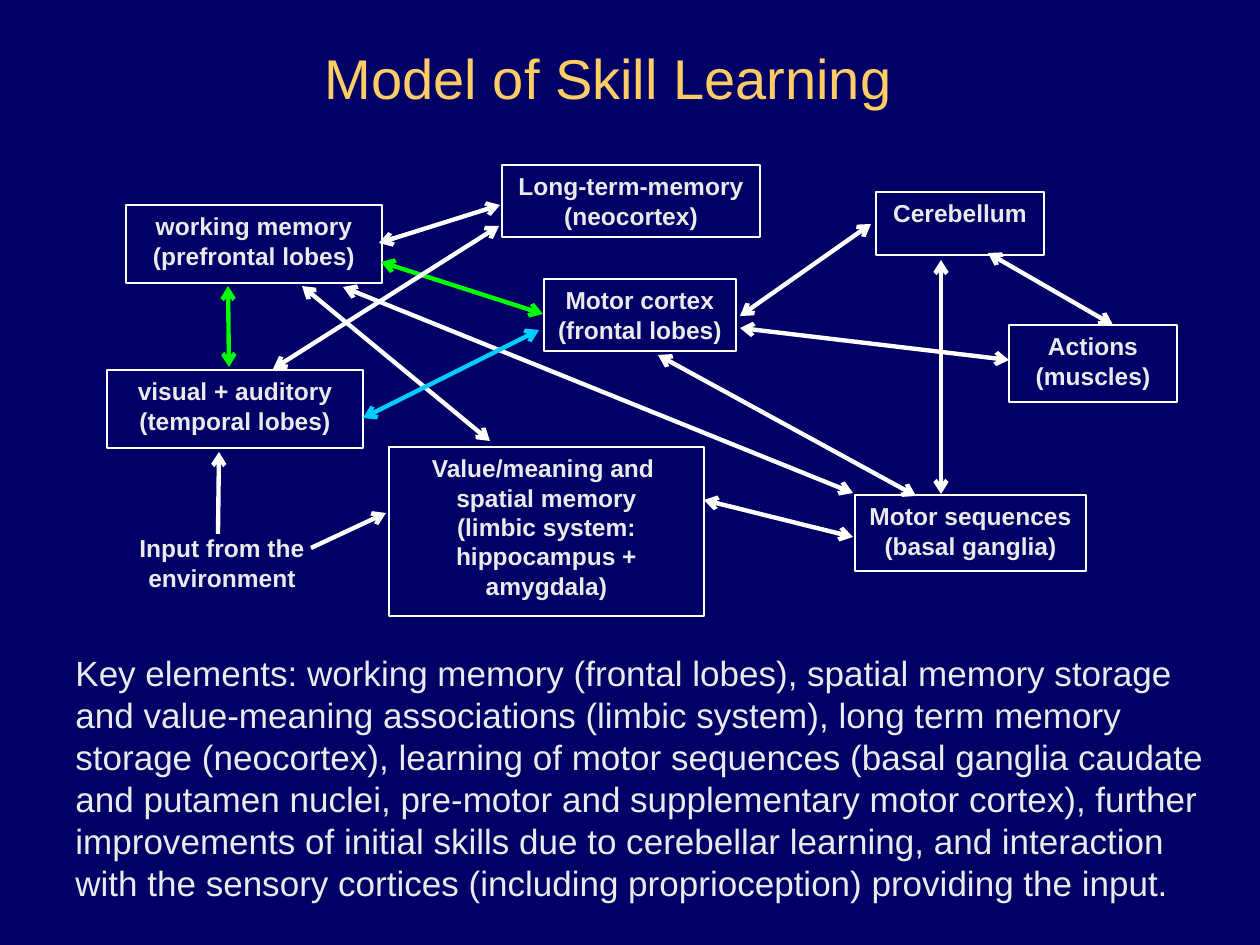
from dataclasses import dataclass

from lxml import etree
from pptx import Presentation
from pptx.dml.color import RGBColor
from pptx.enum.shapes import MSO_CONNECTOR, MSO_SHAPE
from pptx.enum.text import MSO_ANCHOR, MSO_AUTO_SIZE, PP_ALIGN
from pptx.oxml.ns import qn
from pptx.util import Emu, Pt

STRAIGHT = MSO_CONNECTOR.STRAIGHT
RECTANGLE = MSO_SHAPE.RECTANGLE
TOP, MIDDLE = MSO_ANCHOR.TOP, MSO_ANCHOR.MIDDLE
LEFT, CENTER = PP_ALIGN.LEFT, PP_ALIGN.CENTER
NO_AUTOFIT = MSO_AUTO_SIZE.NONE
TITLE_ONLY = 5
EMU_PER_PX = 914400 / 126


@dataclass(frozen=True)
class Theme:
    font: str = "Arial"
    background: str = "000066"
    title: str = "FFCC66"
    text: str = "EAEAEA"
    line: str = "FFFFFF"
    green: str = "00FF00"
    cyan: str = "00CCFF"
    shadow: str = "000000"
    title_size: int = 32
    body_size: int = 20
    label_size: int = 14
    box_line: float = 0.75
    arrow_line: float = 2.5


THEME = Theme()


def px(length):
    return Emu(round(length * EMU_PER_PX))


def rgb(color):
    return RGBColor.from_string(color)


def write(frame, text, size, color=THEME.text, bold=False, align=LEFT, anchor=TOP):
    """Fill a text frame; newlines part paragraphs, \\v breaks a line."""
    frame.auto_size = NO_AUTOFIT
    frame.word_wrap = True
    frame.vertical_anchor = anchor
    frame.text = text
    for paragraph in frame.paragraphs:
        paragraph.alignment = align
        for run in paragraph.runs:
            run.font.name = THEME.font
            run.font.size = Pt(size)
            run.font.bold = bold
            run.font.color.rgb = rgb(color)


class SkillSlide:
    def __init__(self, deck, theme):
        self.theme = theme
        self.slide = deck.slides.add_slide(deck.slide_layouts[TITLE_ONLY])
        fill = self.slide.background.fill
        fill.solid()
        fill.fore_color.rgb = rgb(theme.background)

    def title(self, text, left, top, width, height):
        heading = self.slide.shapes.title
        heading.left, heading.top = px(left), px(top)
        heading.width, heading.height = px(width), px(height)
        write(heading.text_frame, text, self.theme.title_size,
              color=self.theme.title, align=CENTER, anchor=MIDDLE)
        # Text shadow sits right after the run's fill
        run = heading.text_frame.paragraphs[0].runs[0]
        effects = etree.Element(qn("a:effectLst"))
        shadow = etree.SubElement(effects, qn("a:outerShdw"),
                                  dist="35921", dir="2700000")
        etree.SubElement(shadow, qn("a:srgbClr"), val=self.theme.shadow)
        run.font._element.find(qn("a:solidFill")).addnext(effects)

    def text(self, text, left, top, width, height, **style):
        box = self.slide.shapes.add_textbox(px(left), px(top), px(width), px(height))
        write(box.text_frame, text, **style)

    def region(self, text, left, top, width, height):
        box = self.slide.shapes.add_shape(
            RECTANGLE, px(left), px(top), px(width), px(height))
        box.shadow.inherit = False
        box.fill.background()
        box.line.color.rgb = rgb(self.theme.line)
        box.line.width = Pt(self.theme.box_line)
        write(box.text_frame, text, self.theme.label_size, bold=True, align=CENTER)

    def arrow(self, start, end, color=THEME.line, ends=("headEnd", "tailEnd")):
        link = self.slide.shapes.add_connector(
            STRAIGHT, *(px(value) for value in start + end))
        link.line.color.rgb = rgb(color)
        link.line.width = Pt(self.theme.arrow_line)
        properties = link._element.spPr
        for tip in ends:
            etree.SubElement(properties.find(qn("a:ln")), qn(f"a:{tip}"), type="arrow")
        etree.SubElement(properties, qn("a:effectLst"))


REGIONS = [
    ("working memory (prefrontal lobes)", 126, 205, 256, 78),
    ("Cerebellum", 876, 192, 168, 63),
    ("Value/meaning and \vspatial memory\n(limbic system:\nhippocampus + amygdala)",
     389, 447, 315, 169),
    ("Long-term-memory\n(neocortex)", 502, 165, 258, 72),
    ("Motor sequences\n(basal ganglia)", 855, 495, 231, 76),
    ("visual + auditory (temporal lobes)", 107, 370, 256, 78),
    ("Motor cortex\n(frontal lobes)", 544, 279, 192, 72),
    ("Actions\n(muscles)", 1009, 325, 168, 77),
]

TWO_WAY = [
    ((500, 205), (379, 243), THEME.line),    # long-term / working memory
    ((740, 328), (1009, 360), THEME.line),   # motor cortex / actions
    ((302, 286), (490, 441), THEME.line),    # working memory / limbic system
    ((381, 262), (543, 314), THEME.green),   # working memory / motor cortex
    ((704, 500), (853, 537), THEME.line),    # limbic system / motor sequences
    ((941, 494), (941, 260), THEME.line),    # motor sequences / cerebellum
    ((343, 287), (853, 493), THEME.line),    # working memory / motor sequences
    ((740, 316), (871, 224), THEME.line),    # motor cortex / cerebellum
    ((228, 286), (229, 367), THEME.green),   # working memory / senses
    ((499, 226), (273, 369), THEME.line),    # long-term memory / senses
    ((1113, 325), (988, 253), THEME.line),   # actions / cerebellum
    ((658, 355), (916, 496), THEME.line),    # motor cortex / motor sequences
    ((539, 330), (363, 418), THEME.cyan),    # motor cortex / senses
]

INPUTS = [((219, 452), (218, 534)), ((386, 513), (311, 548))]

SUMMARY = (
    "Key elements: working memory (frontal lobes), spatial memory storage and "
    "value-meaning associations (limbic system), long term memory storage "
    "(neocortex), learning of motor sequences (basal ganglia caudate and putamen "
    "nuclei, pre-motor and supplementary motor cortex), further improvements of "
    "initial skills due to cerebellar learning, and interaction with the sensory "
    "cortices (including proprioception) providing the input."
)


def main():
    deck = Presentation()
    deck.slide_width, deck.slide_height = px(1260), px(945)
    page = SkillSlide(deck, THEME)

    # Title and summary
    page.title("Model of Skill Learning", 73, 22, 1071, 110)
    page.text(SUMMARY, 63, 645, 1177, 277, size=THEME.body_size)

    # Brain regions
    for region in REGIONS:
        page.region(*region)
    page.text("Input from the\nenvironment", 94, 527, 256, 78,
              size=THEME.label_size, bold=True, align=CENTER)

    # Links between regions, then inputs from the environment
    for start, end, color in TWO_WAY:
        page.arrow(start, end, color)
    for target, source in INPUTS:
        page.arrow(target, source, ends=("headEnd",))

    deck.save("out.pptx")


if __name__ == "__main__":
    main()
